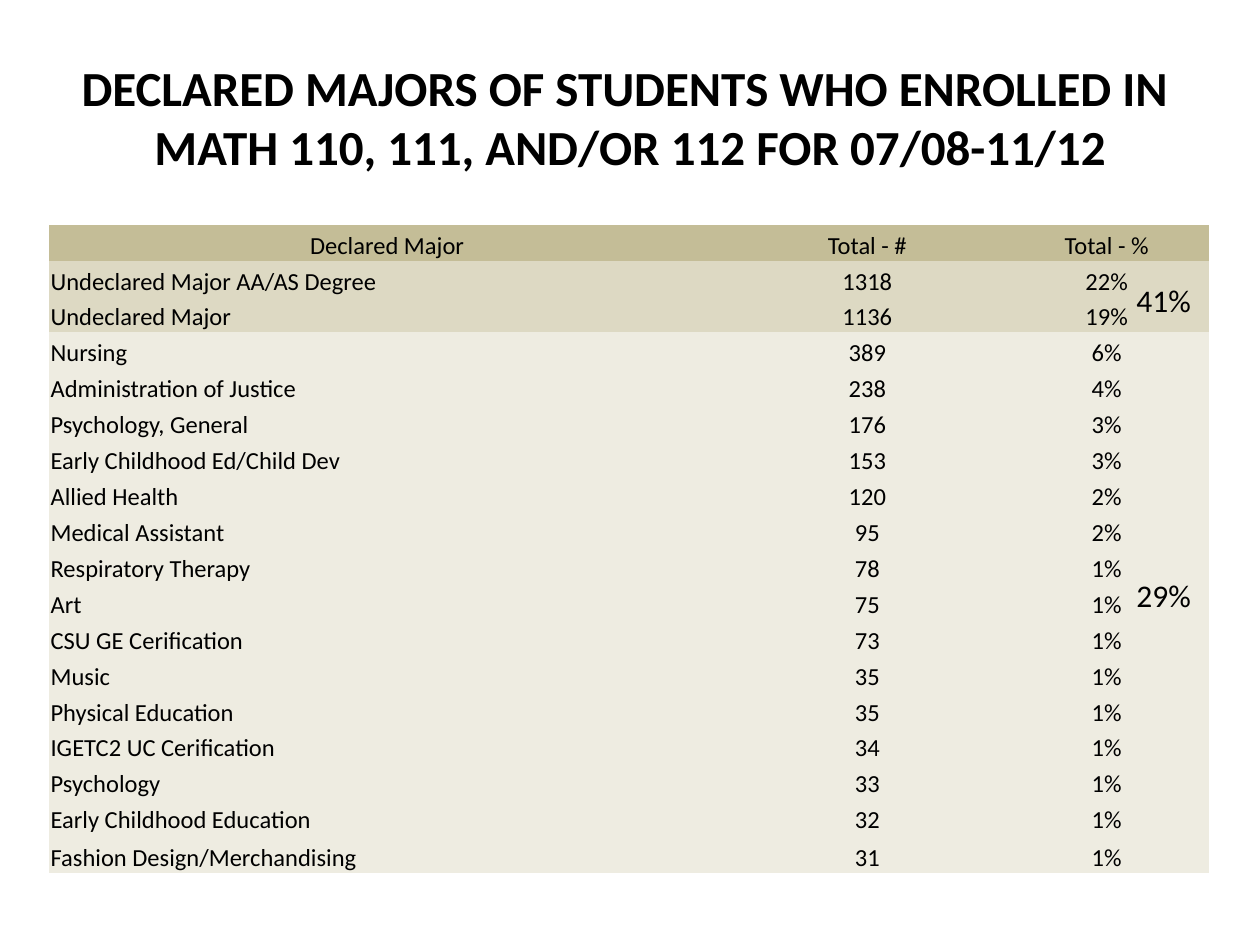
from dataclasses import dataclass

from pptx import Presentation
from pptx.dml.color import RGBColor
from pptx.enum.text import MSO_ANCHOR, MSO_AUTO_SIZE, PP_ALIGN
from pptx.util import Cm, Pt


@dataclass(frozen=True)
class Theme:
    font: str = "Calibri"
    ink: str = "000000"
    header_fill: str = "C4BD97"
    undeclared_fill: str = "DDD9C3"
    declared_fill: str = "EEECE1"
    title_size: int = 28
    table_size: int = 14
    share_size: int = 18
    plain_table: str = "{2D5ABB26-0587-4C30-8999-92F81FD0307C}"


class SlideBuilder:
    def __init__(self, page, theme):
        self.page = page
        self.theme = theme

    def style(self, para, size, align=PP_ALIGN.LEFT, bold=False):
        para.alignment = align
        para.font.name = self.theme.font
        para.font.size = Pt(size)
        para.font.bold = bold
        para.font.color.rgb = RGBColor.from_string(self.theme.ink)

    def title(self, text, left, top, width, height):
        box = self.page.shapes.title
        box.left, box.top, box.width, box.height = map(Cm, (left, top, width, height))
        frame = box.text_frame
        frame.text = text
        frame.auto_size = MSO_AUTO_SIZE.NONE
        frame.vertical_anchor = MSO_ANCHOR.MIDDLE
        self.style(frame.paragraphs[0], self.theme.title_size, PP_ALIGN.CENTER, True)

    def label(self, text, left, top, width, height):
        box = self.page.shapes.add_textbox(*map(Cm, (left, top, width, height)))
        frame = box.text_frame
        frame.word_wrap = True
        frame.auto_size = MSO_AUTO_SIZE.SHAPE_TO_FIT_TEXT
        frame.text = text
        self.style(frame.paragraphs[0], self.theme.share_size)

    def cell(self, cell, text, fill, align):
        cell.text = text
        cell.fill.solid()
        cell.fill.fore_color.rgb = RGBColor.from_string(fill)
        cell.vertical_anchor = MSO_ANCHOR.BOTTOM
        cell.margin_left = cell.margin_right = cell.margin_top = Cm(0.03)
        cell.margin_bottom = 0
        self.style(cell.text_frame.paragraphs[0], self.theme.table_size, align)

    def table(self, rows, fills, left, top, widths, height, last_height):
        frame = self.page.shapes.add_table(
            len(rows), len(widths), Cm(left), Cm(top), Cm(sum(widths)), Cm(height))
        table = frame.table
        table.first_row = table.horz_banding = False
        table._tbl.tblPr.find("{*}tableStyleId").text = self.theme.plain_table
        for column, width in zip(table.columns, widths):
            column.width = Cm(width)
        # Equal rows, with a slightly taller last one
        for row in table.rows:
            row.height = Cm((height - last_height) / (len(rows) - 1))
        table.rows[len(rows) - 1].height = Cm(last_height)
        for r, (values, fill) in enumerate(zip(rows, fills)):
            for c, text in enumerate(values):
                is_name = r > 0 and c == 0
                align = PP_ALIGN.LEFT if is_name else PP_ALIGN.CENTER
                self.cell(table.cell(r, c), text, fill, align)


HEADER = ("Declared Major ", "Total - #", "Total - %")
UNDECLARED = [
    ("Undeclared Major AA/AS Degree", "1318", "22%"),
    ("Undeclared Major", "1136", "19%"),
]
DECLARED = [
    ("Nursing", "389", "6%"),
    ("Administration of Justice", "238", "4%"),
    ("Psychology, General", "176", "3%"),
    ("Early Childhood Ed/Child Dev", "153", "3%"),
    ("Allied Health", "120", "2%"),
    ("Medical Assistant", "95", "2%"),
    ("Respiratory Therapy", "78", "1%"),
    ("Art", "75", "1%"),
    ("CSU GE Cerification", "73", "1%"),
    ("Music", "35", "1%"),
    ("Physical Education", "35", "1%"),
    ("IGETC2 UC Cerification", "34", "1%"),
    ("Psychology", "33", "1%"),
    ("Early Childhood Education", "32", "1%"),
    ("Fashion Design/Merchandising", "31", "1%"),
]


def main():
    theme = Theme()
    deck = Presentation()
    deck.slide_width, deck.slide_height = Cm(25.4), Cm(19.05)
    page = deck.slides.add_slide(deck.slide_layouts[5])
    builder = SlideBuilder(page, theme)

    # Heading
    builder.title("DECLARED MAJORS OF STUDENTS WHO ENROLLED IN \v"
                  "MATH 110, 111, AND/OR 112 FOR 07/08-11/12",
                  1.27, 0.76, 22.86, 3.18)

    # Majors, tinted by group
    fills = ([theme.header_fill] + [theme.undeclared_fill] * len(UNDECLARED)
             + [theme.declared_fill] * len(DECLARED))
    builder.table([HEADER] + UNDECLARED + DECLARED, fills,
                  left=0.99, top=4.53, widths=(13.74, 5.51, 4.14),
                  height=13.07, last_height=0.76)

    # Combined share of each group
    for share, top in (("41%", 5.54), ("29%", 11.48)):
        builder.label(share, 22.66, top, 2.21, 1.02)

    deck.save("out.pptx")


if __name__ == "__main__":
    main()
